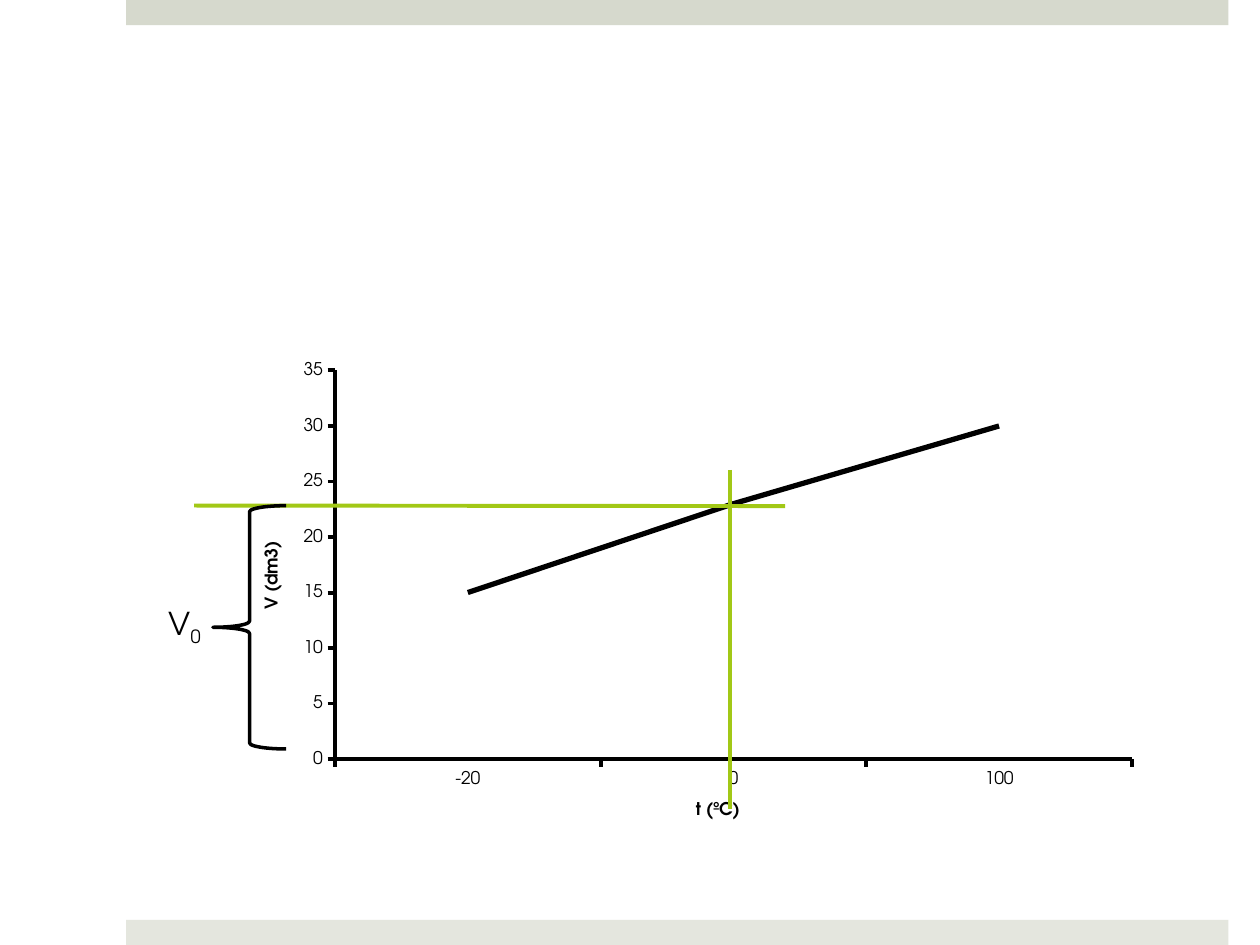
from lxml import etree
from pptx import Presentation
from pptx.chart.data import CategoryChartData
from pptx.dml.color import RGBColor
from pptx.enum.chart import XL_CHART_TYPE as CT, XL_TICK_MARK as TICK
from pptx.enum.shapes import MSO_CONNECTOR as CONN, MSO_SHAPE as SHAPE
from pptx.oxml import parse_xml
from pptx.oxml.ns import nsdecls, qn
from pptx.util import Pt

BLACK = RGBColor(0x00, 0x00, 0x00)
GREEN = RGBColor(0xA2, 0xC8, 0x16)
BAND_TOP = RGBColor(0xD6, 0xD9, 0xCD)
BAND_BOTTOM = RGBColor(0xE4, 0xE6, 0xDE)
FONT = "TeX Gyre Adventor"
LINE_WIDTH = Pt(2.25)


def add_band(slide, x, y, w, h, color):
    s = slide.shapes.add_shape(SHAPE.RECTANGLE, Pt(x), Pt(y), Pt(w), Pt(h))
    s.shadow.inherit = False
    s.fill.solid()
    s.fill.fore_color.rgb = color
    s.line.fill.background()


def manual_layout(x, y, w=None, h=None):
    """Layout in percent of the chart; with a size it places the inner plot."""
    target = '<c:layoutTarget val="inner"/>' if w else ""
    size = f'<c:w val="{w / 100}"/><c:h val="{h / 100}"/>' if w else ""
    return parse_xml(
        f'<c:layout {nsdecls("c")}><c:manualLayout>{target}'
        '<c:xMode val="edge"/><c:yMode val="edge"/>'
        f'<c:x val="{x / 100}"/><c:y val="{y / 100}"/>{size}'
        '</c:manualLayout></c:layout>')


def set_layout(parent, layout, index):
    for old in parent.findall(qn("c:layout")):
        parent.remove(old)
    parent.insert(index, layout)


def style_axis(axis, title, x, y):
    axis.has_major_gridlines = False
    axis.major_tick_mark = TICK.OUTSIDE
    axis.minor_tick_mark = TICK.NONE
    axis.format.line.color.rgb = BLACK
    axis.format.line.width = LINE_WIDTH
    tf = axis.axis_title.text_frame
    tf.text = title
    font = tf.paragraphs[0].font
    font.name, font.size, font.bold = FONT, Pt(10), True
    font.color.rgb = BLACK
    # The layout follows the title's text element
    set_layout(axis.axis_title._element, manual_layout(x, y), 1)


def add_volume_chart(slide, x, y, w, h):
    data = CategoryChartData()
    data.categories = ["-20", "0", "100"]
    data.add_series("Series 1", (15, 23, 30))
    chart = slide.shapes.add_chart(
        CT.LINE, Pt(x), Pt(y), Pt(w), Pt(h), data).chart
    chart.has_legend = False
    chart.has_title = False
    chart.font.name, chart.font.size = FONT, Pt(10)
    chart.font.color.rgb = BLACK

    plot = chart.plots[0]
    plot.vary_by_categories = False
    series = plot.series[0]
    series.smooth = False
    series.format.line.color.rgb = BLACK
    series.format.line.width = Pt(3)

    style_axis(chart.category_axis, "t (ºC)", 49.9, 90.5)
    style_axis(chart.value_axis, "V (dm3)", 2.45, 37.7)
    values = chart.value_axis
    values.minimum_scale, values.maximum_scale, values.major_unit = 0, 35, 5
    values.tick_labels.number_format = "General"
    values.tick_labels.number_format_is_linked = False
    set_layout(chart._chartSpace.chart.plotArea,
               manual_layout(10.73, 3.6, 87.25, 79.1), 0)


def add_guide(slide, x1, y1, x2, y2):
    line = slide.shapes.add_connector(
        CONN.STRAIGHT, Pt(x1), Pt(y1), Pt(x2), Pt(y2))
    line.line.color.rgb = GREEN
    line.line.width = LINE_WIDTH
    etree.SubElement(line._element.spPr, qn("a:effectLst"))


def add_brace(slide, x, y, w, h):
    s = slide.shapes.add_shape(SHAPE.LEFT_BRACE, Pt(x), Pt(y), Pt(w), Pt(h))
    s.shadow.inherit = False
    s.fill.background()
    s.line.color.rgb = BLACK
    s.line.width = Pt(2)


def add_v0_label(slide, x, y, w, h):
    tf = slide.shapes.add_textbox(Pt(x), Pt(y), Pt(w), Pt(h)).text_frame
    p = tf.paragraphs[0]
    p.font.name, p.font.size = FONT, Pt(18)
    p.font.color.rgb = BLACK
    p.add_run().text = "V"
    sub = p.add_run()
    sub.text = "0"
    sub._r.get_or_add_rPr().set("baseline", "-25000")


def main():
    prs = Presentation()
    prs.slide_width, prs.slide_height = Pt(720), Pt(540)
    slide = prs.slides.add_slide(prs.slide_layouts[6])

    # Bands at the top and bottom edges
    add_band(slide, 72, 0, 630, 14.4, BAND_TOP)
    add_band(slide, 72, 525.6, 630, 14.4, BAND_BOTTOM)

    # Volume against temperature
    add_volume_chart(slide, 135.4, 201.6, 522, 280.8)

    # Guides through the volume at 0 ºC
    add_guide(slide, 417, 268.5, 417, 462.2)
    add_guide(slide, 448.6, 289.2, 110.9, 288.9)

    # Brace marking V0
    add_brace(slide, 121.7, 289, 41.8, 139)
    add_v0_label(slide, 89.3, 341.9, 38.2, 28.8)

    prs.save("out.pptx")


if __name__ == "__main__":
    main()
